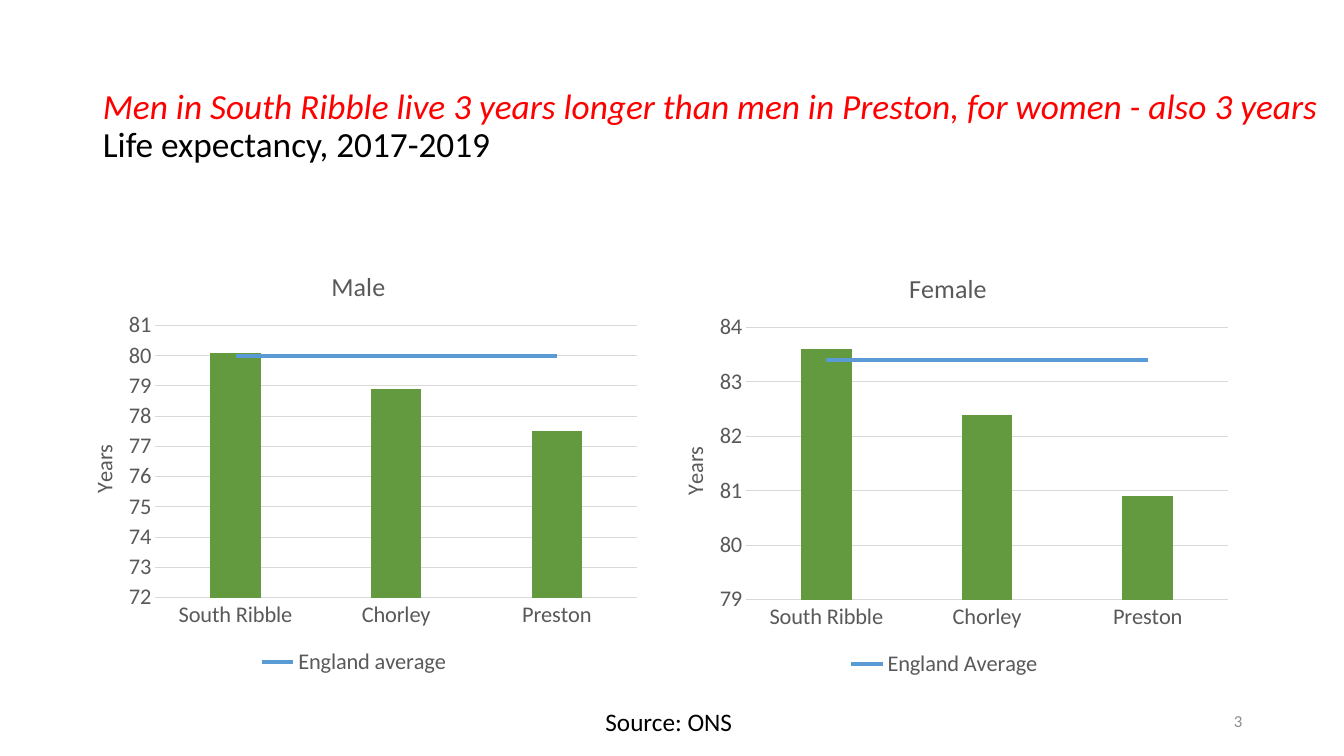
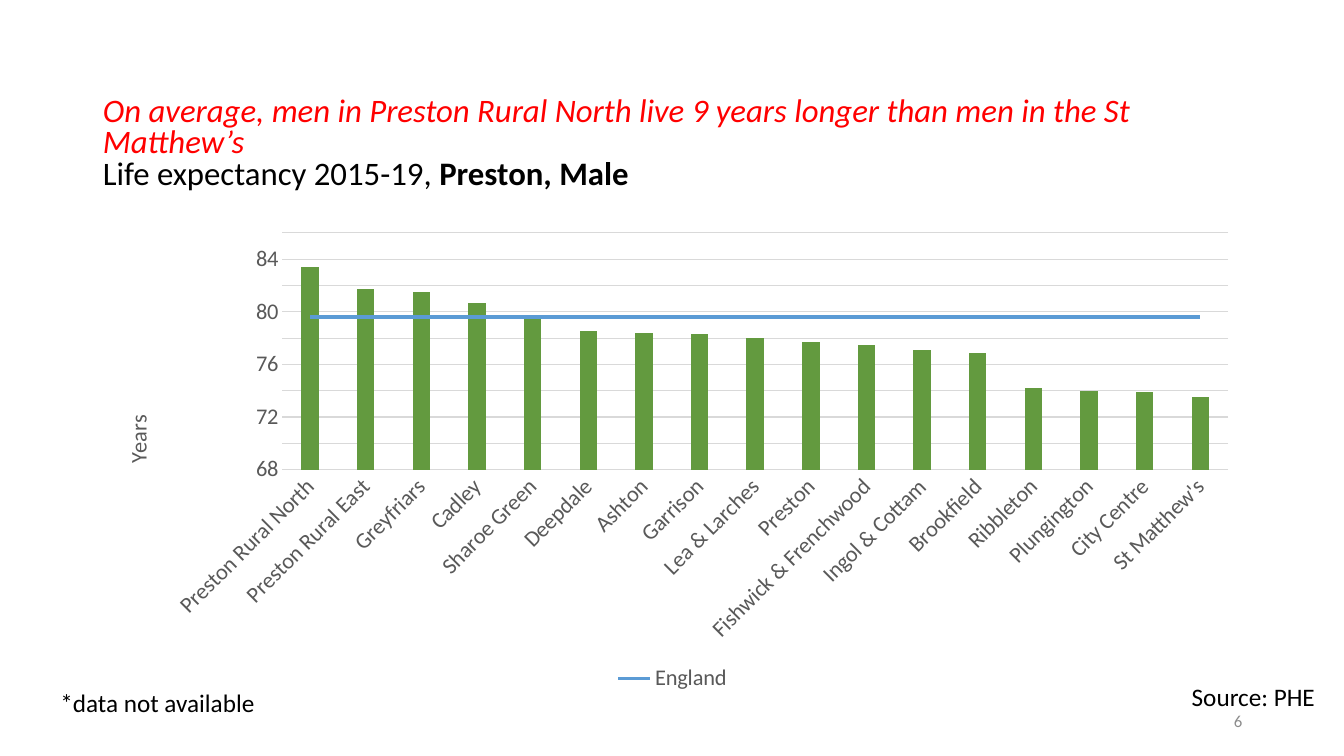
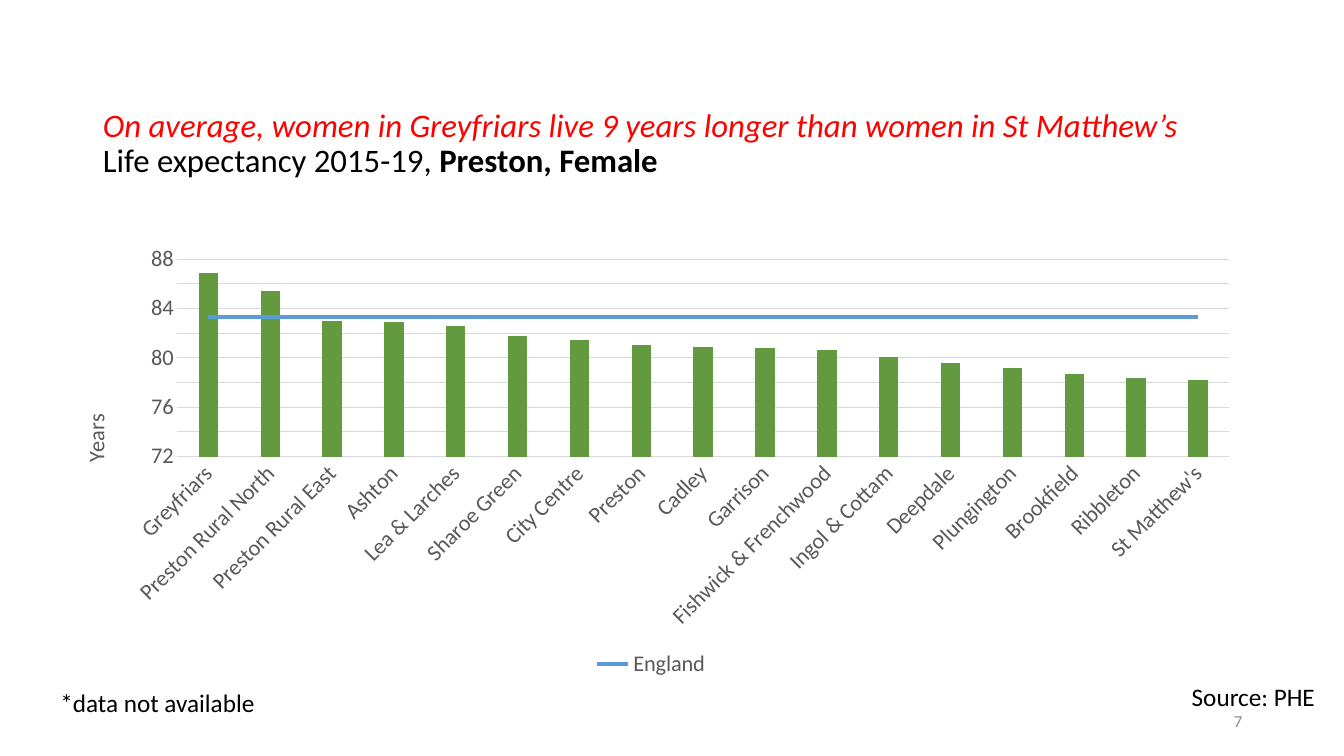
from lxml.etree import SubElement
from pptx import Presentation
from pptx.chart.data import CategoryChartData
from pptx.dml.color import RGBColor
from pptx.enum.chart import XL_CHART_TYPE, XL_LEGEND_POSITION, XL_MARKER_STYLE, XL_TICK_MARK
from pptx.enum.text import MSO_ANCHOR, MSO_AUTO_SIZE, PP_ALIGN
from pptx.oxml import parse_xml
from pptx.oxml.ns import nsdecls, qn
from pptx.util import Inches, Pt

FONT = "Calibri"
RED, BLACK, GREY, PALE = "FF0000", "000000", "595959", "D9D9D9"
GREEN, BLUE, NUMBER_GREY = "639A3F", "5B9BD5", "8C8C8C"
TITLE_BOX = (0.92, 0.89, 11.5, 1.08)
SOURCE_BOX = (10.61, 6.71, 2.53, 0.4)
NOTE_BOX = (0.5, 6.77, 2.61, 0.4)
NUMBER_BOX = (9.42, 6.95, 3, 0.4)
AREAS = ["South Ribble", "Chorley", "Preston"]

MALE_WARDS = {
    "Preston Rural North": 83.4, "Preston Rural East": 81.7, "Greyfriars": 81.5,
    "Cadley": 80.7, "Sharoe Green": 79.6, "Deepdale": 78.5, "Ashton": 78.4,
    "Garrison": 78.3, "Lea & Larches": 78, "Preston": 77.7,
    "Fishwick & Frenchwood": 77.5, "Ingol & Cottam": 77.1, "Brookfield": 76.9,
    "Ribbleton": 74.2, "Plungington": 74, "City Centre": 73.9, "St Matthew's": 73.5,
}
FEMALE_WARDS = {
    "Greyfriars": 86.9, "Preston Rural North": 85.4, "Preston Rural East": 83,
    "Ashton": 82.9, "Lea & Larches": 82.6, "Sharoe Green": 81.8, "City Centre": 81.4,
    "Preston": 81, "Cadley": 80.9, "Garrison": 80.8, "Fishwick & Frenchwood": 80.6,
    "Ingol & Cottam": 80.1, "Deepdale": 79.6, "Plungington": 79.2,
    "Brookfield": 78.7, "Ribbleton": 78.4, "St Matthew's": 78.2,
}


def rgb(value):
    return RGBColor.from_string(value)


def style_font(font, size, color, bold=False, italic=False):
    font.name, font.size, font.bold, font.italic = FONT, Pt(size), bold, italic
    font.color.rgb = rgb(color)


def add_label(slide, box, text, size=18, color=BLACK, align=PP_ALIGN.RIGHT,
              anchor=MSO_ANCHOR.TOP):
    tf = slide.shapes.add_textbox(*map(Inches, box)).text_frame
    tf.word_wrap = True
    tf.vertical_anchor = anchor
    tf.text = text
    p = tf.paragraphs[0]
    p.alignment = align
    style_font(p.runs[0].font, size, color)


def set_title(slide, message, subject, group="", box=TITLE_BOX, size=23.4, spacing=0.9):
    title = slide.shapes.title
    title.left, title.top, title.width, title.height = map(Inches, box)
    tf = title.text_frame
    tf.word_wrap = True
    tf.auto_size = MSO_AUTO_SIZE.NONE
    tf.vertical_anchor = MSO_ANCHOR.MIDDLE
    p = tf.paragraphs[0]
    p.alignment = PP_ALIGN.LEFT
    p.line_spacing = spacing
    for text, color, bold, italic in ((message, RED, False, True),
                                      (subject, BLACK, False, False),
                                      (group, BLACK, True, False)):
        if text:
            r = p.add_run()
            r.text = text
            style_font(r.font, size, color, bold, italic)
        if text == message:
            p.add_line_break()
    for br in p._p.findall(qn("a:br")):
        SubElement(br, qn("a:rPr"), sz=str(round(size * 100)))


def set_layout(parent, index, shares, inner=False):
    for old in parent.findall(qn("c:layout")):
        parent.remove(old)
    layout = parse_xml(f"<c:layout {nsdecls('c')}><c:manualLayout/></c:layout>")
    manual = layout[0]
    if inner:
        SubElement(manual, qn("c:layoutTarget"), val="inner")
    for name in ("xMode", "yMode"):
        SubElement(manual, qn(f"c:{name}"), val="edge")
    for name, share in zip("xywh", shares):
        SubElement(manual, qn(f"c:{name}"), val=f"{share:.4f}")
    parent.insert(index, layout)


def set_chart_text(title, text, size, shares):
    tf = title.text_frame
    tf.text = text
    style_font(tf.paragraphs[0].runs[0].font, size, GREY)
    set_layout(title._element, 1, shares)


def move_average_to_line(chart, weight):
    bars = chart.plots[0]._element
    ser = bars.findall(qn("c:ser"))[1]
    for flag in ser.findall(qn("c:invertIfNegative")):
        ser.remove(flag)
    line_plot = parse_xml(
        f'<c:lineChart {nsdecls("c")}><c:grouping val="standard"/>'
        '<c:varyColors val="0"/><c:marker val="1"/></c:lineChart>')
    line_plot.insert(2, ser)
    for axis_id in bars.findall(qn("c:axId")):
        SubElement(line_plot, qn("c:axId"), val=axis_id.get("val"))
    bars.addnext(line_plot)
    average = chart.plots[1].series[0]
    average.smooth = False
    average.marker.style = XL_MARKER_STYLE.NONE
    average.format.line.color.rgb = rgb(BLUE)
    average.format.line.width = Pt(weight)


def style_axes(chart, scale, slanted):
    for axis in (chart.category_axis, chart.value_axis):
        axis.major_tick_mark = axis.minor_tick_mark = XL_TICK_MARK.NONE
        style_font(axis.tick_labels.font, 16, GREY)
    if slanted:
        labels = chart.category_axis._element.find(qn("c:txPr"))
        labels.find(qn("a:bodyPr")).set("rot", "-2700000")
    years = chart.value_axis
    years.minimum_scale, years.maximum_scale, years.major_unit = scale
    years.tick_labels.number_format = "0"
    years.tick_labels.number_format_is_linked = False
    years.format.line.fill.background()
    for line in (chart.category_axis.format.line, years.major_gridlines.format.line):
        line.color.rgb = rgb(PALE)
        line.width = Pt(0.75)


def style_legend(chart):
    chart.has_legend = True
    legend = chart.legend
    legend.position = XL_LEGEND_POSITION.BOTTOM
    legend.include_in_layout = False
    style_font(legend.font, 16, GREY)
    legend._element.insert(1, parse_xml(
        f'<c:legendEntry {nsdecls("c")}><c:idx val="0"/><c:delete val="1"/></c:legendEntry>'))


def add_life_chart(slide, box, plot, scale, values, average, average_name="England",
                   years_top=2, weight=3, title="", title_left=0, slanted=True):
    width, height = box[2:]
    data = CategoryChartData(number_format="0.0")
    data.categories = list(values)
    data.add_series("Series 1", list(values.values()))
    data.add_series(average_name, [average] * len(values))
    chart = slide.shapes.add_chart(
        XL_CHART_TYPE.COLUMN_CLUSTERED, *map(Inches, box), data).chart
    style_font(chart.font, 16, BLACK)
    chart.has_title = bool(title)
    if title:
        set_chart_text(chart.chart_title, title, 18.6, (title_left / width, 0.24 / height))
    bars = chart.plots[0]
    bars.gap_width, bars.overlap, bars.vary_by_categories = 219, -27, False
    fill = bars.series[0].format.fill
    fill.solid()
    fill.fore_color.rgb = rgb(GREEN)
    move_average_to_line(chart, weight)
    style_axes(chart, scale, slanted)
    set_chart_text(chart.value_axis.axis_title, "Years", 16,
                   (0.26 / width, years_top / height))
    style_legend(chart)
    left, top, plot_width, plot_height = plot
    set_layout(bars._element.getparent(), 0,
               (left / width, top / height, plot_width / width, plot_height / height), True)


def new_slide(prs, number):
    slide = prs.slides.add_slide(prs.slide_layouts[5])
    add_label(slide, NUMBER_BOX, number, 12, NUMBER_GREY, anchor=MSO_ANCHOR.MIDDLE)
    return slide


def build_district_slide(prs):
    slide = new_slide(prs, "3")
    set_title(slide, "Men in South Ribble live 3 years longer than men in Preston, "
              "for women - also 3 years", "Life expectancy, 2017-2019",
              box=(0.92, 0.72, 12.42, 1.08), size=25.2)
    add_label(slide, (4.83, 6.96, 2.53, 0.4), "Source: ONS")
    plot = (0.96, 0.86, 4.78, 2.7)
    add_life_chart(slide, (0.58, 2.37, 5.86, 4.38), plot, (72, 81, 1),
                   dict(zip(AREAS, (80.1, 78.9, 77.5))), 80, "England average",
                   title="Male", title_left=2.66, slanted=False)
    add_life_chart(slide, (6.44, 2.39, 5.85, 4.38), plot, (79, 84, 1),
                   dict(zip(AREAS, (83.6, 82.4, 80.9))), 83.4, "England Average",
                   title="Female", title_left=2.53, slanted=False)


def build_ward_slide(prs, number, message, group, spacing, **chart):
    slide = new_slide(prs, number)
    set_title(slide, message, "Life expectancy 2015-19, ", group, spacing=spacing)
    add_label(slide, NOTE_BOX, "*data not available", align=PP_ALIGN.LEFT)
    add_life_chart(slide, **chart)
    add_label(slide, SOURCE_BOX, "Source: PHE")


def main():
    prs = Presentation()
    prs.slide_width, prs.slide_height = Inches(13.33), Inches(7.5)
    build_district_slide(prs)
    build_ward_slide(
        prs, "6",
        "On average, men in Preston Rural North live 9 years longer than men in the St Matthew’s",
        "Preston, Male", 0.8, box=(0.92, 2.22, 11.5, 4.69), plot=(1.88, 0.09, 9.38, 2.35),
        scale=(68, 86, 2), values=MALE_WARDS, average=79.6, years_top=1.86, weight=2.25)
    build_ward_slide(
        prs, "7",
        "On average, women in Greyfriars live 9 years longer than women in St Matthew’s",
        "Preston, Female", 0.9, box=(0.5, 2.34, 11.91, 4.43), plot=(1.26, 0.23, 10.43, 1.96),
        scale=(72, 88, 2), values=FEMALE_WARDS, average=83.3, years_top=1.73)
    prs.save("out.pptx")


if __name__ == "__main__":
    main()
